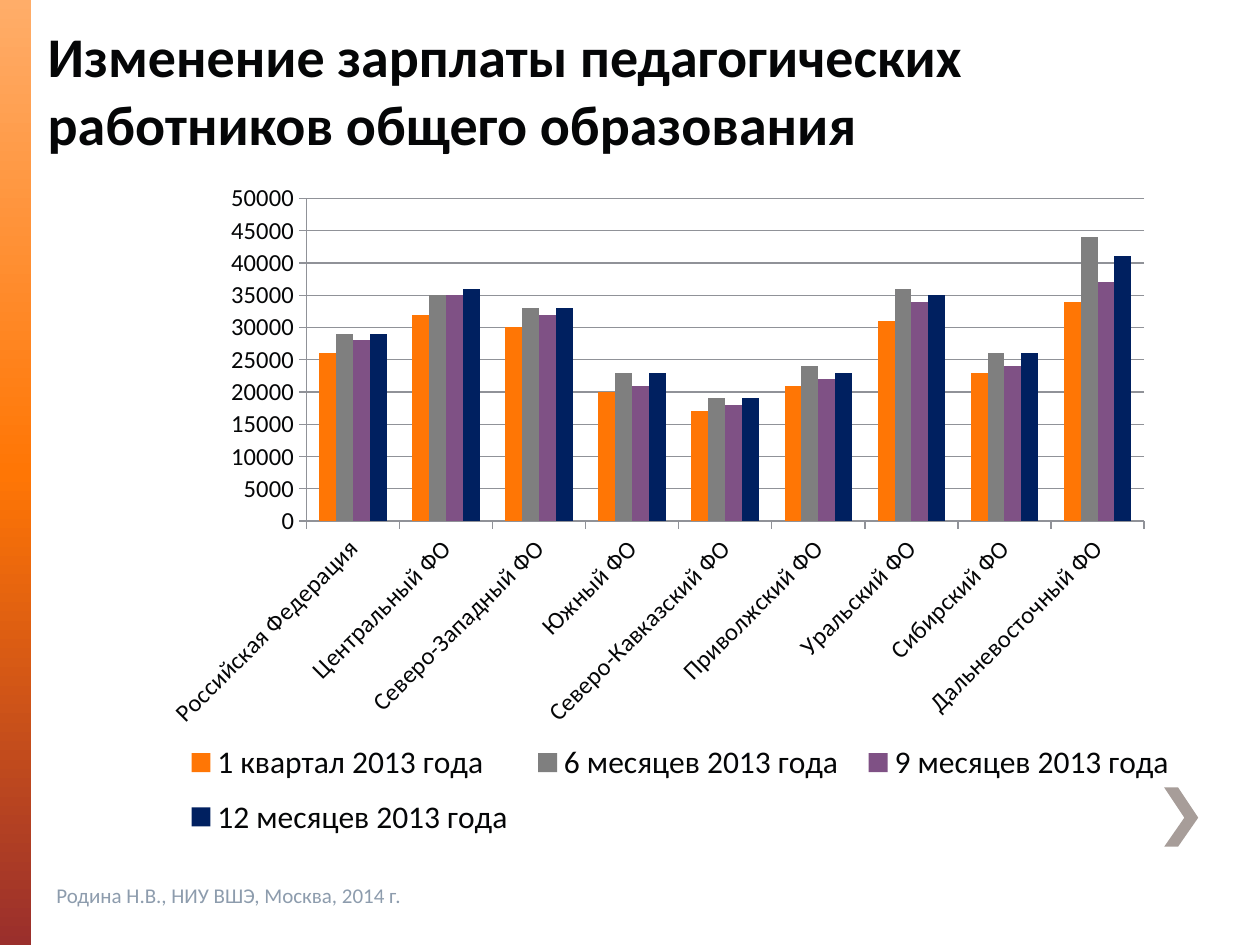
"""Build a slide with a clustered column chart of teacher pay by federal district."""
from copy import deepcopy

from lxml import etree
from pptx import Presentation
from pptx.chart.data import CategoryChartData
from pptx.dml.color import RGBColor
from pptx.enum.chart import XL_CHART_TYPE, XL_LEGEND_POSITION, XL_TICK_MARK
from pptx.enum.shapes import MSO_SHAPE
from pptx.enum.text import MSO_ANCHOR
from pptx.oxml.ns import qn
from pptx.util import Inches, Pt

COLUMN = XL_CHART_TYPE.COLUMN_CLUSTERED
RIGHT = XL_LEGEND_POSITION.RIGHT
OUTSIDE = XL_TICK_MARK.OUTSIDE
RECT = MSO_SHAPE.RECTANGLE
BOTTOM, MIDDLE = MSO_ANCHOR.BOTTOM, MSO_ANCHOR.MIDDLE

INK = RGBColor(0x05, 0x06, 0x07)
MUTED = RGBColor(0x8D, 0x9C, 0xAD)
SLATE = RGBColor(0x4D, 0x5B, 0x6B)
RULE = RGBColor(0x90, 0x92, 0x98)
TAUPE = RGBColor(0xA7, 0x9D, 0x99)
PEACH = RGBColor(0xFF, 0xAD, 0x69)
ORANGE = RGBColor(0xFF, 0x76, 0x05)
BRICK = RGBColor(0x9A, 0x2F, 0x2C)
GRAY = RGBColor(0x7F, 0x7F, 0x7F)
PLUM = RGBColor(0x7F, 0x51, 0x85)
NAVY = RGBColor(0x00, 0x20, 0x60)
FONT = "Calibri"

TITLE = "Изменение зарплаты педагогических работников общего образования"
FOOTER = "Родина Н.В., НИУ ВШЭ, Москва, 2014 г."
REGIONS = [
    "Российская Федерация", "Центральный ФО", "Северо-Западный ФО",
    "Южный ФО", "Северо-Кавказский ФО", "Приволжский ФО",
    "Уральский ФО", "Сибирский ФО", "Дальневосточный ФО",
]
SERIES = [
    ("1 квартал 2013 года", ORANGE, [26, 32, 30, 20, 17, 21, 31, 23, 34]),
    ("6 месяцев 2013 года", GRAY, [29, 35, 33, 23, 19, 24, 36, 26, 44]),
    ("9 месяцев 2013 года", PLUM, [28, 35, 32, 21, 18, 22, 34, 24, 37]),
    ("12 месяцев 2013 года", NAVY, [29, 36, 33, 23, 19, 23, 35, 26, 41]),
]
STOPS = [(0, PEACH), (0.5, ORANGE), (1, BRICK)]
ARROW = [(9.35, 6.25), (9.24, 6.25), (9.4, 6.49), (9.24, 6.72), (9.35, 6.72), (9.51, 6.49)]
PLOT = {"x": 0.171, "y": 0.048, "w": 0.782, "h": 0.465}
KEY = {"x": 0.045, "y": 0.81, "w": 0.95, "h": 0.18}


def style(font, size, color):
    font.name, font.size = FONT, Pt(size)
    font.color.rgb = color


def add_bar(slide):
    bar = slide.shapes.add_shape(RECT, 0, 0, Inches(0.25), Inches(7.5))
    bar.shadow.inherit = False
    bar.line.fill.background()
    bar.fill.gradient()
    bar.fill.gradient_angle = 270
    stops = bar.fill.gradient_stops
    group = bar.element.spPr.find(qn("a:gradFill")).find(qn("a:gsLst"))
    group.insert(1, deepcopy(group[0]))
    stops = bar.fill.gradient_stops
    for stop, (place, color) in zip(stops, STOPS):
        stop.position = place
        stop.color.rgb = color


def add_arrow(slide):
    points = [(Inches(x), Inches(y)) for x, y in ARROW]
    maker = slide.shapes.build_freeform(*points[0])
    maker.add_line_segments(points[1:], close=True)
    arrow = maker.convert_to_shape()
    arrow.shadow.inherit = False
    arrow.fill.solid()
    arrow.fill.fore_color.rgb = TAUPE
    arrow.line.fill.background()


def add_text(slide, text, box, size, color, anchor, bold=False):
    frame = slide.shapes.add_textbox(*map(Inches, box)).text_frame
    frame.word_wrap = True
    frame.vertical_anchor = anchor
    frame.text = text
    font = frame.paragraphs[0].runs[0].font
    style(font, size, color)
    font.bold = bold


def set_layout(part, after, sizes, inner=False):
    for old in part.findall(qn("c:layout")):
        part.remove(old)
    layout = etree.Element(qn("c:layout"))
    manual = etree.SubElement(layout, qn("c:manualLayout"))
    items = [("layoutTarget", "inner")] if inner else []
    items += [("xMode", "edge"), ("yMode", "edge"), *sizes.items()]
    for name, value in items:
        etree.SubElement(manual, qn(f"c:{name}")).set("val", str(value))
    if after is None:
        part.insert(0, layout)
    else:
        after.addnext(layout)


def add_chart(slide):
    data = CategoryChartData()
    data.categories = REGIONS
    for name, _, pay in SERIES:
        data.add_series(name, [value * 1000 for value in pay])
    box = map(Inches, (0.98, 1.31, 8.5, 5.51))
    chart = slide.shapes.add_chart(COLUMN, *box, data).chart
    style(chart.font, 10, SLATE)
    chart.has_title = False
    plot = chart.plots[0]
    plot.gap_width, plot.overlap = 150, 0
    plot.vary_by_categories = False
    for series, (_, color, _) in zip(plot.series, SERIES):
        series.format.fill.solid()
        series.format.fill.fore_color.rgb = color
        series.invert_if_negative = False

    side, base = chart.value_axis, chart.category_axis
    side.minimum_scale, side.maximum_scale, side.major_unit = 0, 50000, 5000
    side.has_major_gridlines = True
    for axis in (side, base):
        axis.major_tick_mark = OUTSIDE
        style(axis.tick_labels.font, 14, INK)
    for item in (side, base, side.major_gridlines):
        item.format.line.color.rgb = RULE
        item.format.line.width = Pt(0.75)
    labels = base.tick_labels.font
    labels.bold = False
    base._element.find(qn("c:txPr")).find(qn("a:bodyPr")).set("rot", "-2700000")

    chart.has_legend = True
    legend = chart.legend
    legend.position = RIGHT
    legend.include_in_layout = False
    style(legend.font, 18, INK)
    key = legend._element
    set_layout(key, key.find(qn("c:legendPos")), KEY)
    set_layout(chart._chartSpace.chart.plotArea, None, PLOT, inner=True)


def main():
    deck = Presentation()
    deck.slide_width, deck.slide_height = Inches(10), Inches(7.5)
    slide = deck.slides.add_slide(deck.slide_layouts[6])
    add_bar(slide)
    add_arrow(slide)
    add_text(slide, TITLE, (0.28, 0.44, 9.45, 0.85), 32, INK, BOTTOM, True)
    add_text(slide, FOOTER, (0.35, 6.98, 7.83, 0.25), 12, MUTED, MIDDLE)
    add_chart(slide)
    deck.save("out.pptx")


if __name__ == "__main__":
    main()
